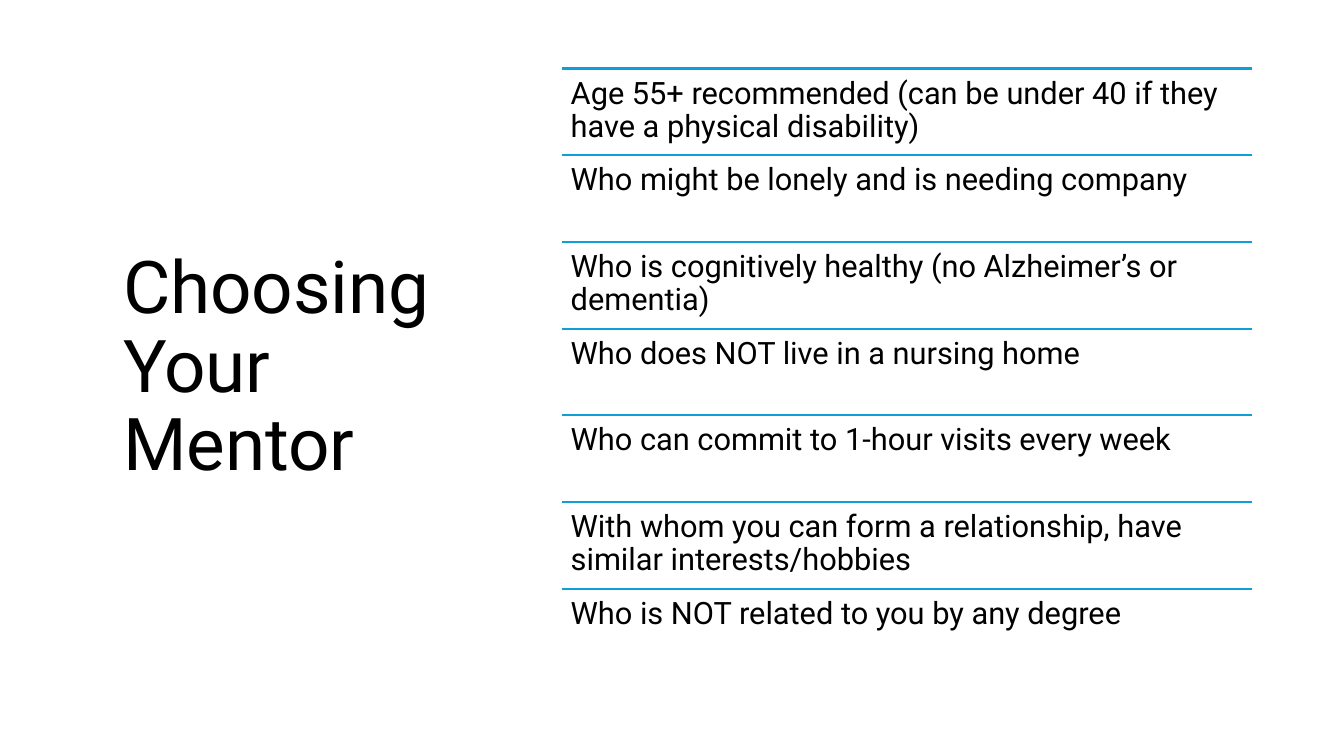
from dataclasses import dataclass

from lxml import etree
from pptx import Presentation
from pptx.dml.color import RGBColor
from pptx.enum.shapes import MSO_CONNECTOR
from pptx.enum.text import MSO_ANCHOR, MSO_AUTO_SIZE, PP_ALIGN
from pptx.oxml.ns import qn
from pptx.shapes.shapetree import GroupShapes
from pptx.text.text import TextFrame
from pptx.util import Inches, Pt

STRAIGHT = MSO_CONNECTOR.STRAIGHT
TOP, MIDDLE = MSO_ANCHOR.TOP, MSO_ANCHOR.MIDDLE
LEFT = PP_ALIGN.LEFT
NO_AUTOFIT = MSO_AUTO_SIZE.NONE

BLACK = RGBColor(0x00, 0x00, 0x00)
BLUE = RGBColor(0x0F, 0x9E, 0xD5)
FONT = "Roboto"

LIST_LEFT, LIST_TOP = 5.57, 0.68
LIST_WIDTH, ROW_HEIGHT = 6.85, 0.86


@dataclass
class Criterion:
    text: str
    row: int

    @property
    def top(self) -> float:
        return LIST_TOP + self.row * ROW_HEIGHT


CRITERIA = [
    Criterion(text, row)
    for row, text in enumerate([
        "Age 55+ recommended (can be under 40 if they have a physical disability)",
        "Who might be lonely and is needing company",
        "Who is cognitively healthy (no Alzheimer’s or dementia)",
        "Who does NOT live in a nursing home",
        "Who can commit to 1-hour visits every week",
        "With whom you can form a relationship, have similar interests/hobbies",
        "Who is NOT related to you by any degree",
    ])
]


def write_text(frame: TextFrame, text: str, size: float, anchor: MSO_ANCHOR,
               side: float, end: float) -> None:
    frame.word_wrap = True
    frame.auto_size = NO_AUTOFIT
    frame.vertical_anchor = anchor
    frame.margin_left = frame.margin_right = Inches(side)
    frame.margin_top = frame.margin_bottom = Inches(end)
    paragraph = frame.paragraphs[0]
    paragraph.text = text
    paragraph.alignment = LEFT
    paragraph.line_spacing = 0.9
    paragraph.font.name = FONT
    paragraph.font.size = Pt(size)
    paragraph.font.color.rgb = BLACK


def draw_criterion(shapes: GroupShapes, criterion: Criterion) -> None:
    left, top, width = Inches(LIST_LEFT), Inches(criterion.top), Inches(LIST_WIDTH)
    rule = shapes.add_connector(STRAIGHT, left, top, left + width, top)
    rule.line.color.rgb = BLUE
    rule.line.width = Pt(1.5)
    etree.SubElement(rule._element.spPr, qn("a:effectLst"))
    box = shapes.add_textbox(left, top, width, Inches(ROW_HEIGHT))
    write_text(box.text_frame, criterion.text, 22, TOP, 0.09, 0.09)


def main() -> None:
    deck = Presentation()
    deck.slide_width, deck.slide_height = Inches(13.33), Inches(7.5)
    page = deck.slides.add_slide(deck.slide_layouts.get_by_name("Title Only"))

    # Title on the left
    title = page.shapes.title
    title.left, title.top = Inches(0.92), Inches(0.61)
    title.width, title.height = Inches(3.69), Inches(6.09)
    write_text(title.text_frame, "Choosing Your Mentor", 52, MIDDLE, 0.3, 0.2)

    # Ruled list of criteria on the right
    criteria_group = page.shapes.add_group_shape()
    for criterion in CRITERIA:
        draw_criterion(criteria_group.shapes, criterion)

    deck.save("out.pptx")


if __name__ == "__main__":
    main()
